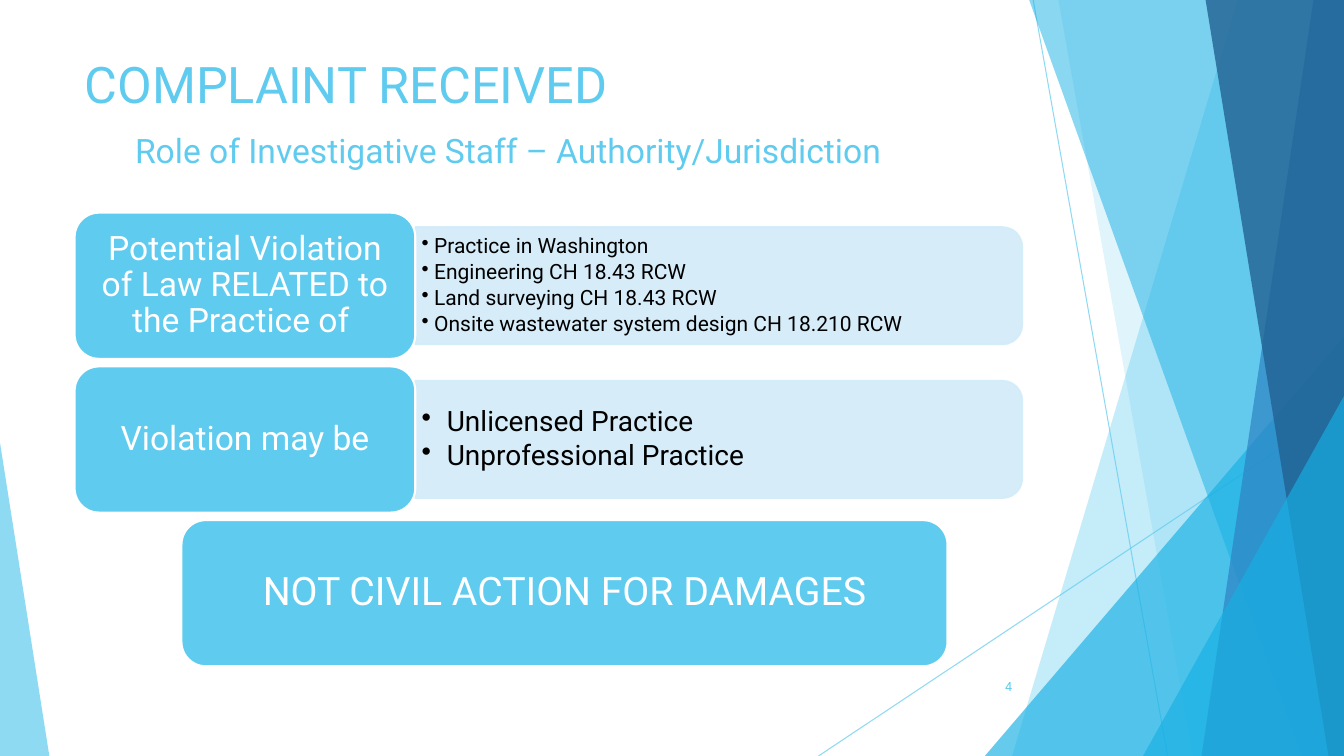
"""Build the slide about complaints received, on a grid of 160 columns by 90 rows."""
from dataclasses import dataclass

import pptx
import pptx.dml.color
import pptx.enum.shapes
import pptx.enum.text
import pptx.oxml.ns
import pptx.oxml.xmlchemy
import pptx.util

COLS, ROWS = 160, 90
KIND = pptx.enum.shapes.MSO_SHAPE
ALIGN = pptx.enum.text.PP_ALIGN
ANCHOR = pptx.enum.text.MSO_ANCHOR


@dataclass(frozen=True)
class Theme:
    font: str = "Roboto"
    sky: str = "5FCBEF"
    cyan: str = "17B0E4"
    blue: str = "2E83C3"
    navy: str = "226292"
    pale: str = "D2ECF9"
    white: str = "FFFFFF"
    black: str = "000000"
    title: int = 36
    label: int = 24
    banner: int = 28
    page: int = 9
    hair: float = 0.75
    edge: float = 1.5


THEME = Theme()


@dataclass(frozen=True)
class Box:
    left: float
    top: float
    width: float
    height: float


@dataclass(frozen=True)
class Ray:
    start: tuple[float, float]
    end: tuple[float, float]


@dataclass(frozen=True)
class Band:
    top: float
    foot: float
    color: str
    alpha: int


@dataclass(frozen=True)
class Wedge:
    box: Box
    peak: float
    color: str
    alpha: int


@dataclass(frozen=True)
class Topic:
    label: str
    points: list[str]
    size: int
    indent: float


RAYS = [Ray((123, 0), (139, ROWS)), Ray((COLS, 48.36), (97.44, ROWS))]
DECOR = [
    Band(147.36, 120.48, THEME.sky, 36),
    Band(126, 142, THEME.sky, 20),
    Wedge(Box(117.24, 40, 42.76, 50), 1, THEME.cyan, 66),
    Band(122.52, 154.92, THEME.cyan, 50),
    Band(156.36, 143.04, THEME.blue, 70),
    Band(143.52, 158.16, THEME.navy, 80),
    Wedge(Box(136.08, 47.16, 23.92, 42.84), 1, THEME.cyan, 66),
    Wedge(Box(0, 52.68, 5.88, 37.32), 0, THEME.sky, 70),
]
TOPICS = [
    Topic("Potential Violation of Law RELATED to the Practice of ",
          ["Practice in Washington", "Engineering CH 18.43 RCW",
           "Land surveying CH 18.43 RCW",
           "Onsite wastewater system design CH 18.210 RCW"], 15, 1.5),
    Topic("Violation may be",
          ["Unlicensed Practice", "Unprofessional Practice"], 20, 3),
]
LEFT, TOP, PITCH = 8.88, 25.32, 18.3
CARD_W, CARD_H = 40.56, 17.4
PANEL_W, PANEL_H = 72.24, 13.92

deck = pptx.Presentation()
deck.slide_width = pptx.util.Inches(13.33)
deck.slide_height = pptx.util.Inches(7.5)
slide = deck.slides.add_slide(deck.slide_layouts[6])
shapes = slide.shapes


def col(count: float) -> int:
    return round(deck.slide_width * count / COLS)


def row(count: float) -> int:
    return round(deck.slide_height * count / ROWS)


def place(box: Box) -> tuple[int, int, int, int]:
    return col(box.left), row(box.top), col(box.width), row(box.height)


def rgb(color: str) -> pptx.dml.color.RGBColor:
    return pptx.dml.color.RGBColor.from_string(color)


def node(name: str):
    return pptx.oxml.xmlchemy.OxmlElement(name)


def fade(shape, alpha: int) -> None:
    for mark in shape.element.spPr.iter(pptx.oxml.ns.qn("a:srgbClr")):
        tag = node("a:alpha")
        tag.set("val", str(alpha * 1000))
        mark.append(tag)


def paint(shape, fill: str, line: str | None = None, alpha: int = 100) -> None:
    shape.shadow.inherit = False
    shape.fill.solid()
    shape.fill.fore_color.rgb = rgb(fill)
    if line:
        shape.line.color.rgb = rgb(line)
        shape.line.width = pptx.util.Pt(THEME.edge)
    else:
        shape.line.fill.background()
    if alpha < 100:
        fade(shape, alpha)


def style(part, size: int, color: str, align=ALIGN.LEFT) -> None:
    part.alignment = align
    for run in part.runs:
        run.font.name = THEME.font
        run.font.size = pptx.util.Pt(size)
        run.font.color.rgb = rgb(color)


def frame(shape, text: str, anchor, pad: float, rim: float):
    body = shape.text_frame
    body.word_wrap = True
    body.vertical_anchor = anchor
    body.margin_left = body.margin_right = col(pad)
    body.margin_top = body.margin_bottom = row(rim)
    body.text = text
    return body


def draw_ray(ray: Ray) -> None:
    line = shapes.add_connector(
        pptx.enum.shapes.MSO_CONNECTOR.STRAIGHT,
        col(ray.start[0]), row(ray.start[1]), col(ray.end[0]), row(ray.end[1]))
    line.line.color.rgb = rgb(THEME.sky)
    line.line.width = pptx.util.Pt(THEME.hair)
    fade(line, 70)
    line.element.spPr.append(node("a:effectLst"))


def draw_decor(item: Band | Wedge) -> None:
    if isinstance(item, Band):
        pen = shapes.build_freeform(col(item.top), 0)
        pen.add_line_segments([(col(COLS), 0), (col(COLS), row(ROWS)),
                               (col(item.foot), row(ROWS))], close=True)
        shape = pen.convert_to_shape()
    else:
        shape = shapes.add_shape(KIND.ISOSCELES_TRIANGLE, *place(item.box))
        shape.adjustments[0] = item.peak
    paint(shape, item.color, alpha=item.alpha)


def draw_card(box: Box, text: str, size: int) -> None:
    card = shapes.add_shape(KIND.ROUNDED_RECTANGLE, *place(box))
    paint(card, THEME.sky, THEME.white)
    part = frame(card, text, ANCHOR.MIDDLE, 2, 1).paragraphs[0]
    part.line_spacing = 0.9
    style(part, size, THEME.white, ALIGN.CENTER)


def draw_panel(box: Box, topic: Topic) -> None:
    left, top, width, height = place(box)
    shift = (width - height) // 2
    panel = shapes.add_shape(KIND.ROUND_2_SAME_RECTANGLE,
                             left + shift, top - shift, height, width)
    panel.rotation = 90
    paint(panel, THEME.pale, THEME.pale, 90)
    note = shapes.add_textbox(left, top, width, height)
    body = frame(note, "\n".join(topic.points), ANCHOR.MIDDLE, 0.75, 0.4)
    for part in body.paragraphs:
        part.line_spacing = 0.9
        part.space_after = pptx.util.Pt(topic.size * 0.15)
        style(part, topic.size, THEME.black)
        props = part._p.get_or_add_pPr()
        props.set("marL", str(col(topic.indent)))
        props.set("indent", str(-col(topic.indent)))
        mark = node("a:buChar")
        mark.set("char", "•")
        props.append(mark)


def draw_title() -> None:
    head = shapes.add_textbox(*place(Box(LEFT, 5.7, 112.8, 19.6)))
    text = "COMPLAINT RECEIVED\nRole of Investigative Staff – Authority/Jurisdiction"
    main, sub = frame(head, text, ANCHOR.TOP, 1.2, 0.6).paragraphs
    style(main, THEME.title, THEME.sky)
    style(sub, THEME.label, THEME.sky)
    sub.space_before = pptx.util.Pt(12)
    sub._p.get_or_add_pPr().set("marL", str(col(6)))


def build() -> None:
    for ray in RAYS:
        draw_ray(ray)
    for item in DECOR:
        draw_decor(item)
    draw_title()
    for rank, topic in enumerate(TOPICS):
        top = TOP + rank * PITCH
        draw_panel(Box(LEFT + CARD_W, top + (CARD_H - PANEL_H) / 2,
                       PANEL_W, PANEL_H), topic)
        draw_card(Box(LEFT, top, CARD_W, CARD_H), topic.label, THEME.label)
    draw_card(Box(21.6, TOP + len(TOPICS) * PITCH, 91.2, CARD_H),
              "NOT CIVIL ACTION FOR DAMAGES", THEME.banner)
    page = shapes.add_textbox(*place(Box(112.68, 79.32, 9, 4.8)))
    part = frame(page, "4", ANCHOR.MIDDLE, 1.2, 0.6).paragraphs[0]
    style(part, THEME.page, THEME.sky, ALIGN.RIGHT)


build()
deck.save("out.pptx")
